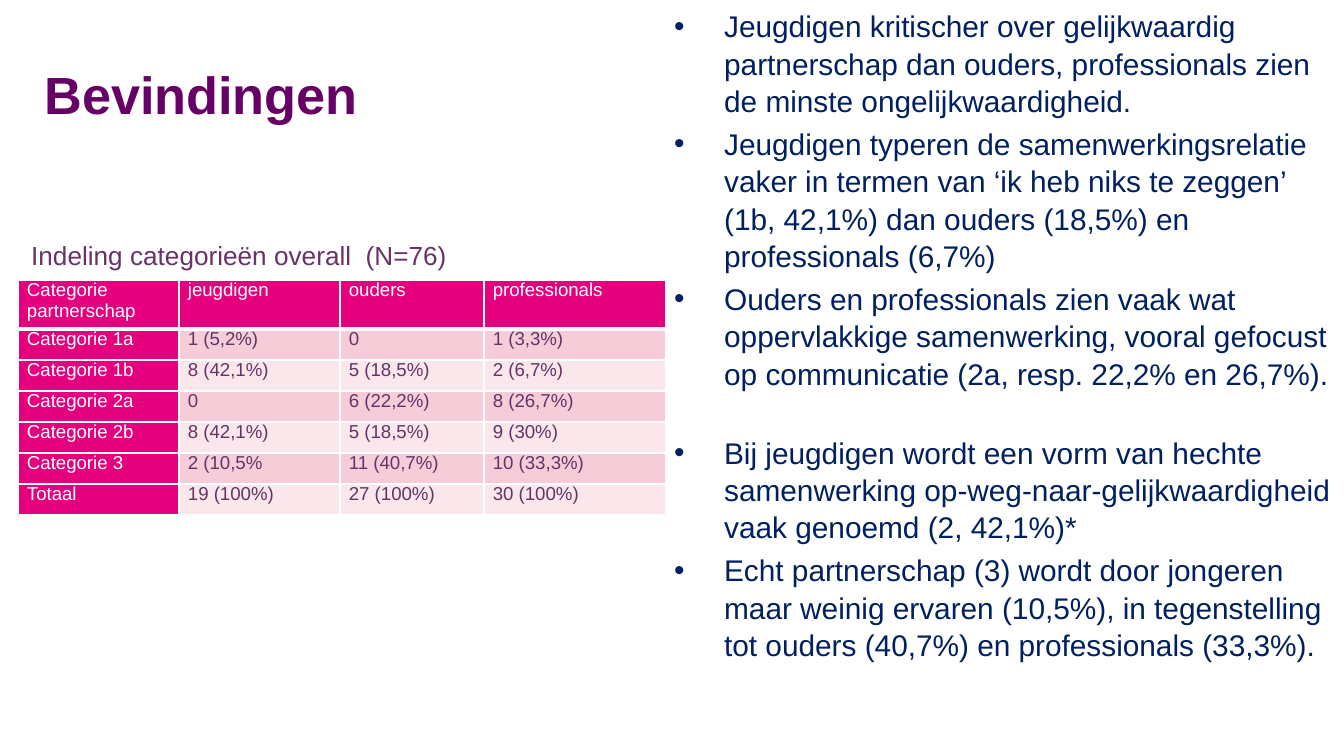
from typing import NamedTuple

from lxml.etree import SubElement
from pptx import Presentation
from pptx.dml.color import RGBColor
from pptx.enum.text import MSO_ANCHOR as Anchor, PP_ALIGN as Align
from pptx.oxml.ns import qn
from pptx.util import Emu, Pt

EMU_PER_PX = 914400 / 134.4
FONT = "Arial"
WHITE = RGBColor(0xFF, 0xFF, 0xFF)
PURPLE = RGBColor(0x66, 0x00, 0x66)
PLUM = RGBColor(0x66, 0x33, 0x66)
NAVY = RGBColor(0x00, 0x20, 0x60)
MAGENTA = RGBColor(0xE5, 0x00, 0x7D)
ROW_PINKS = (RGBColor(0xF5, 0xCC, 0xD7), RGBColor(0xFA, 0xE7, 0xEC))


class Box(NamedTuple):
    left: int
    top: int
    width: int
    height: int


class Finding(NamedTuple):
    text: str
    space_before: float = 3.2


SLIDE = Box(0, 0, 1344, 756)
TITLE = Box(31, 31, 1282, 126)
FINDINGS = Box(661, 0, 683, 756)
CAPTION = Box(18, 233, 519, 46)
TABLE = Box(18, 280, 648, 235)
COLUMN_WIDTHS = (161, 161, 144, 182)
HEADER_HEIGHT, ROW_HEIGHT = 49, 31
CELL_INSET = 9
BULLET_INDENT = 50

findings = (
    Finding("Jeugdigen kritischer over gelijkwaardig partnerschap dan ouders, "
            "professionals zien de minste ongelijkwaardigheid.", 0),
    Finding("Jeugdigen typeren de samenwerkingsrelatie vaker in termen van "
            "‘ik heb niks te zeggen’ (1b, 42,1%) dan ouders (18,5%) en "
            "professionals (6,7%)"),
    Finding("Ouders en professionals zien vaak wat oppervlakkige samenwerking, "
            "vooral gefocust op communicatie (2a, resp. 22,2% en 26,7%)."),
    Finding("Bij jeugdigen wordt een vorm van hechte samenwerking "
            "op-weg-naar-gelijkwaardigheid vaak genoemd (2, 42,1%)*", 22.4),
    Finding("Echt partnerschap (3) wordt door jongeren maar weinig ervaren (10,5%), "
            "in tegenstelling tot ouders (40,7%) en professionals (33,3%)."),
)

category_rows = (
    ("Categorie partnerschap", "jeugdigen", "ouders", "professionals"),
    ("Categorie 1a", "1 (5,2%)", "0", "1 (3,3%)"),
    ("Categorie 1b", "8 (42,1%)", "5 (18,5%)", "2 (6,7%)"),
    ("Categorie 2a", "0", "6 (22,2%)", "8 (26,7%)"),
    ("Categorie 2b", "8 (42,1%)", "5 (18,5%)", "9 (30%)"),
    ("Categorie 3", "2 (10,5%", "11 (40,7%)", "10 (33,3%)"),
    ("Totaal", "19 (100%)", "27 (100%)", "30 (100%)"),
)


def px(length: int) -> Emu:
    return Emu(round(length * EMU_PER_PX))


def emu_box(box: Box) -> tuple[Emu, ...]:
    return tuple(px(length) for length in box)


def format_runs(paragraph, size: int, color: RGBColor, bold: bool = False) -> None:
    for run in paragraph.runs:
        run.font.name = FONT
        run.font.size = Pt(size)
        run.font.bold = bold
        run.font.color.rgb = color


def add_bullet(paragraph) -> None:
    properties = paragraph._p.get_or_add_pPr()
    properties.set("marL", str(px(BULLET_INDENT)))
    properties.set("indent", str(-px(BULLET_INDENT)))
    SubElement(properties, qn("a:buFont"), typeface=FONT)
    SubElement(properties, qn("a:buChar"), char="•")


def add_title(slide) -> None:
    title = slide.shapes.title
    title.left, title.top, title.width, title.height = emu_box(TITLE)
    frame = title.text_frame
    frame.text = "Bevindingen"
    frame.vertical_anchor = Anchor.MIDDLE
    heading = frame.paragraphs[0]
    heading.alignment = Align.LEFT
    format_runs(heading, 28, PURPLE, bold=True)


def add_findings(slide) -> None:
    frame = slide.shapes.add_textbox(*emu_box(FINDINGS)).text_frame
    frame.word_wrap = True
    for index, finding in enumerate(findings):
        paragraph = frame.add_paragraph() if index else frame.paragraphs[0]
        paragraph.text = finding.text
        add_bullet(paragraph)
        paragraph.line_spacing = 1.04
        paragraph.space_before = Pt(finding.space_before)
        format_runs(paragraph, 16, NAVY)


def add_caption(slide) -> None:
    frame = slide.shapes.add_textbox(*emu_box(CAPTION)).text_frame
    frame.word_wrap = True
    frame.text = "Indeling categorieën overall  (N=76)"
    format_runs(frame.paragraphs[0], 14, PLUM)


def add_borders(cell, bottom_points: int) -> None:
    """Give a cell white edges; only the bottom one varies in width."""
    properties = cell._tc.get_or_add_tcPr()
    for edge, points in (("L", 1), ("R", 1), ("T", 1), ("B", bottom_points)):
        line = SubElement(properties, qn(f"a:ln{edge}"), w=str(Pt(points)))
        fill = SubElement(line, qn("a:solidFill"))
        SubElement(fill, qn("a:srgbClr"), val=str(WHITE))


def fill_cell(cell, text: str, row: int, column: int) -> None:
    is_heading = row == 0 or column == 0
    cell.text = text
    cell.margin_left = cell.margin_right = px(CELL_INSET)
    cell.margin_top = cell.margin_bottom = 0
    cell.vertical_anchor = Anchor.TOP
    add_borders(cell, bottom_points=3 if row == 0 else 1)
    cell.fill.solid()
    cell.fill.fore_color.rgb = MAGENTA if is_heading else ROW_PINKS[(row - 1) % 2]
    format_runs(cell.text_frame.paragraphs[0], 10, WHITE if is_heading else PLUM)


def add_category_table(slide) -> None:
    table = slide.shapes.add_table(
        len(category_rows), len(COLUMN_WIDTHS), *emu_box(TABLE)).table
    for column, width in zip(table.columns, COLUMN_WIDTHS):
        column.width = px(width)
    for row_index, texts in enumerate(category_rows):
        table.rows[row_index].height = px(ROW_HEIGHT if row_index else HEADER_HEIGHT)
        for column_index, text in enumerate(texts):
            fill_cell(table.cell(row_index, column_index), text, row_index, column_index)


def main() -> None:
    deck = Presentation()
    deck.slide_width, deck.slide_height = px(SLIDE.width), px(SLIDE.height)
    slide = deck.slides.add_slide(deck.slide_layouts[5])
    add_title(slide)
    add_findings(slide)
    add_category_table(slide)
    add_caption(slide)
    deck.save("out.pptx")


if __name__ == "__main__":
    main()
